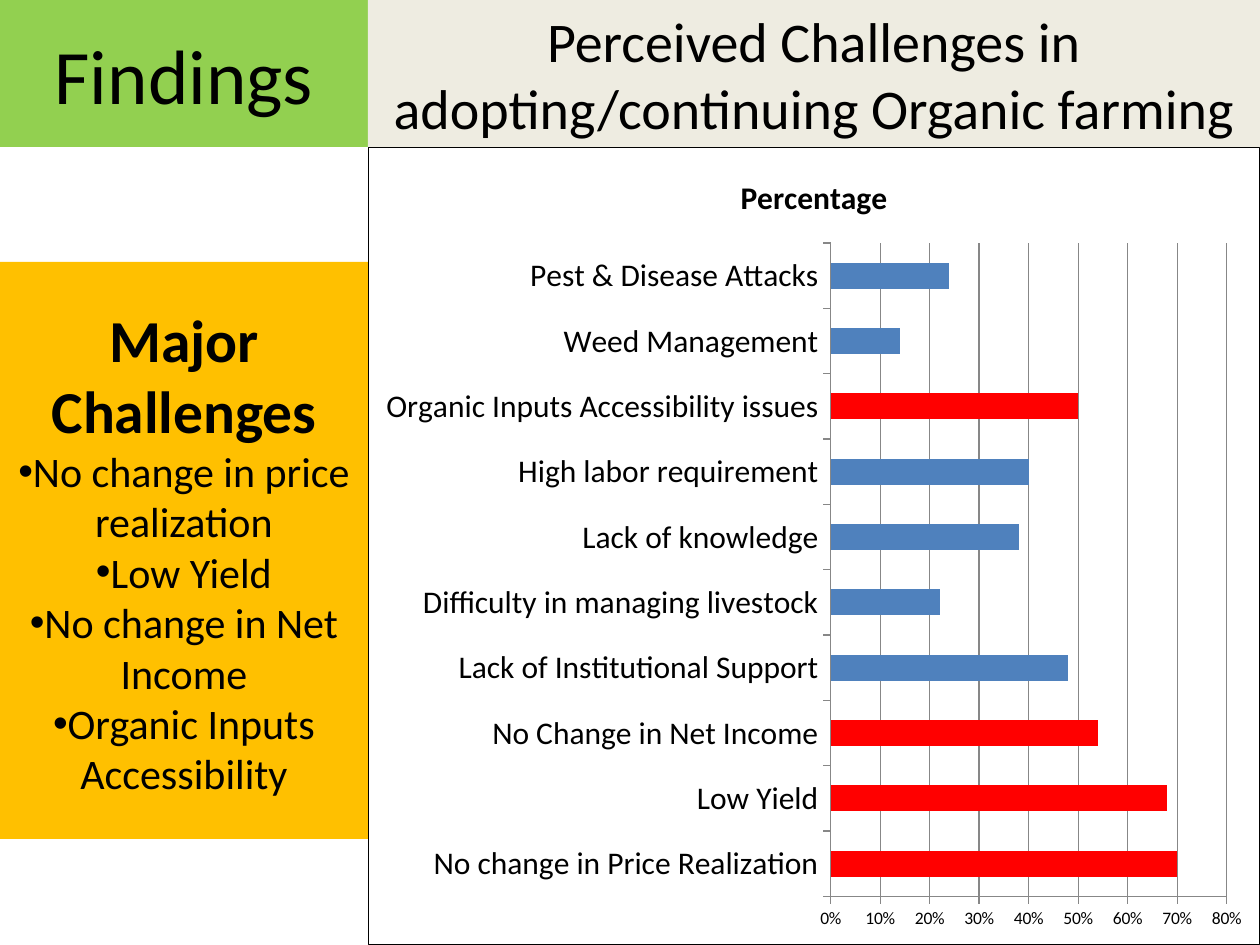
import dataclasses

import pptx
import pptx.chart.data
import pptx.dml.color
import pptx.enum.chart
import pptx.enum.shapes
import pptx.enum.text
import pptx.oxml
import pptx.oxml.ns
import pptx.util

EMU_PER_PX = 914400 // 126
SLIDE_WIDTH, SLIDE_HEIGHT = 1260, 945
SIDE_WIDTH, HEADER_HEIGHT = 368, 147

CHALLENGES = [
    ("No change in Price Realization", 0.70),
    ("Low Yield", 0.68),
    ("No Change in Net Income", 0.54),
    ("Lack of Institutional Support", 0.48),
    ("Difficulty in managing livestock", 0.22),
    ("Lack of knowledge", 0.38),
    ("High labor requirement", 0.40),
    ("Organic Inputs Accessibility issues", 0.50),
    ("Weed Management", 0.14),
    ("Pest & Disease Attacks", 0.24),
]
MAJOR_SHARE = 0.5
MAJOR_CHALLENGES = [
    "No change in price realization",
    "Low Yield",
    "No change in Net Income",
    "Organic Inputs Accessibility",
]


@dataclasses.dataclass(frozen=True)
class Theme:
    font: str = "Calibri"
    text: str = "000000"
    green: str = "92D050"
    beige: str = "EEECE1"
    amber: str = "FFC000"
    bar: str = "4F81BD"
    highlight: str = "FF0000"
    grid: str = "878787"
    title_size: int = 44
    heading_size: int = 34
    header_size: int = 32
    list_size: int = 24
    label_size: int = 18
    tick_size: int = 10


def px(length):
    return pptx.util.Emu(length * EMU_PER_PX)


def rgb(value):
    return pptx.dml.color.RGBColor.from_string(value)


class SlideBuilder:
    def __init__(self, slide, theme):
        self.slide = slide
        self.theme = theme

    def style_font(self, font, size, bold=False):
        font.name = self.theme.font
        font.size = pptx.util.Pt(size)
        font.bold = bold
        font.color.rgb = rgb(self.theme.text)

    def panel(self, shape, box, color):
        shape.left, shape.top, shape.width, shape.height = map(px, box)
        shape.fill.solid()
        shape.fill.fore_color.rgb = rgb(color)
        shape.line.fill.background()
        frame = shape.text_frame
        frame.word_wrap = True
        frame.auto_size = pptx.enum.text.MSO_AUTO_SIZE.NONE
        frame.vertical_anchor = pptx.enum.text.MSO_ANCHOR.MIDDLE
        return frame

    def fill_paragraph(self, paragraph, text, size, bold=False, bullet=False):
        paragraph.text = text
        paragraph.alignment = pptx.enum.text.PP_ALIGN.CENTER
        paragraph.space_before = pptx.util.Pt(0)
        self.style_font(paragraph.font, size, bold)
        properties = paragraph._p.get_or_add_pPr()
        properties.set("marL", "0")
        properties.set("indent", "0")
        mark = '<a:buChar %s char="•"/>' if bullet else "<a:buNone %s/>"
        element = pptx.oxml.parse_xml(mark % pptx.oxml.ns.nsdecls("a"))
        properties.insert_element_before(element, "a:tabLst", "a:defRPr", "a:extLst")

    def title(self, text, box, color):
        frame = self.panel(self.slide.shapes.title, box, color)
        self.fill_paragraph(frame.paragraphs[0], text, self.theme.title_size)

    def header(self, text, box, color):
        shape = self.slide.shapes.add_shape(
            pptx.enum.shapes.MSO_SHAPE.RECTANGLE, *map(px, box))
        shape.shadow.inherit = False
        frame = self.panel(shape, box, color)
        self.fill_paragraph(frame.paragraphs[0], text, self.theme.header_size)

    def bullet_list(self, heading, items, box, color):
        frame = self.panel(self.slide.placeholders[1], box, color)
        self.fill_paragraph(frame.paragraphs[0], heading, self.theme.heading_size, bold=True)
        for item in items:
            self.fill_paragraph(frame.add_paragraph(), item, self.theme.list_size, bullet=True)

    def bar_chart(self, name, rows, box):
        data = pptx.chart.data.CategoryChartData(number_format="0%")
        data.categories = [label for label, share in rows]
        data.add_series(name, [share for label, share in rows])
        chart = self.slide.shapes.add_chart(
            pptx.enum.chart.XL_CHART_TYPE.BAR_STACKED, *map(px, box), data).chart
        self.style_font(chart.font, self.theme.tick_size)
        chart.has_legend = False
        chart.has_title = True
        title = chart.chart_title.text_frame.paragraphs[0]
        title.text = name
        self.style_font(title.font, self.theme.label_size, bold=True)

        plot = chart.plots[0]
        plot.gap_width = 150
        plot.overlap = 100
        plot.vary_by_categories = False
        series = plot.series[0]
        series.invert_if_negative = False
        series.format.fill.solid()
        series.format.fill.fore_color.rgb = rgb(self.theme.bar)
        for index, (label, share) in enumerate(rows):
            if share >= MAJOR_SHARE:
                fill = series.points[index].format.fill
                fill.solid()
                fill.fore_color.rgb = rgb(self.theme.highlight)
        self.style_axes(chart)
        self.border(chart)

    def style_axes(self, chart):
        values = chart.value_axis
        values.minimum_scale, values.maximum_scale, values.major_unit = 0, 0.8, 0.1
        values.has_major_gridlines = True
        values.tick_labels.number_format = "0%"
        values.tick_labels.number_format_is_linked = False
        self.style_font(values.tick_labels.font, self.theme.tick_size)
        self.style_font(chart.category_axis.tick_labels.font, self.theme.label_size)
        for axis in (values, chart.category_axis):
            axis.major_tick_mark = pptx.enum.chart.XL_TICK_MARK.OUTSIDE
        for part in (values, chart.category_axis, values.major_gridlines):
            part.format.line.color.rgb = rgb(self.theme.grid)
            part.format.line.width = pptx.util.Pt(0.75)

    def border(self, chart):
        properties = pptx.oxml.parse_xml(
            f'<c:spPr {pptx.oxml.ns.nsdecls("c", "a")}><a:noFill/>'
            f'<a:ln w="{pptx.util.Pt(0.75)}"><a:solidFill>'
            f'<a:srgbClr val="{self.theme.text}"/></a:solidFill></a:ln></c:spPr>')
        chart._chartSpace.chart.addnext(properties)


def main():
    presentation = pptx.Presentation()
    presentation.slide_width = px(SLIDE_WIDTH)
    presentation.slide_height = px(SLIDE_HEIGHT)
    slide = presentation.slides.add_slide(presentation.slide_layouts[1])
    theme = Theme()
    builder = SlideBuilder(slide, theme)
    main_width = SLIDE_WIDTH - SIDE_WIDTH

    builder.title("Findings", (0, 0, SIDE_WIDTH, HEADER_HEIGHT), theme.green)
    builder.header("Perceived Challenges in adopting/continuing Organic farming",
                   (SIDE_WIDTH, 0, main_width, HEADER_HEIGHT), theme.beige)
    builder.bar_chart("Percentage", CHALLENGES,
                      (SIDE_WIDTH, HEADER_HEIGHT, main_width,
                       SLIDE_HEIGHT - HEADER_HEIGHT))
    builder.bullet_list("Major Challenges", MAJOR_CHALLENGES,
                        (0, 262, SIDE_WIDTH, 577), theme.amber)
    presentation.save("out.pptx")


if __name__ == "__main__":
    main()
